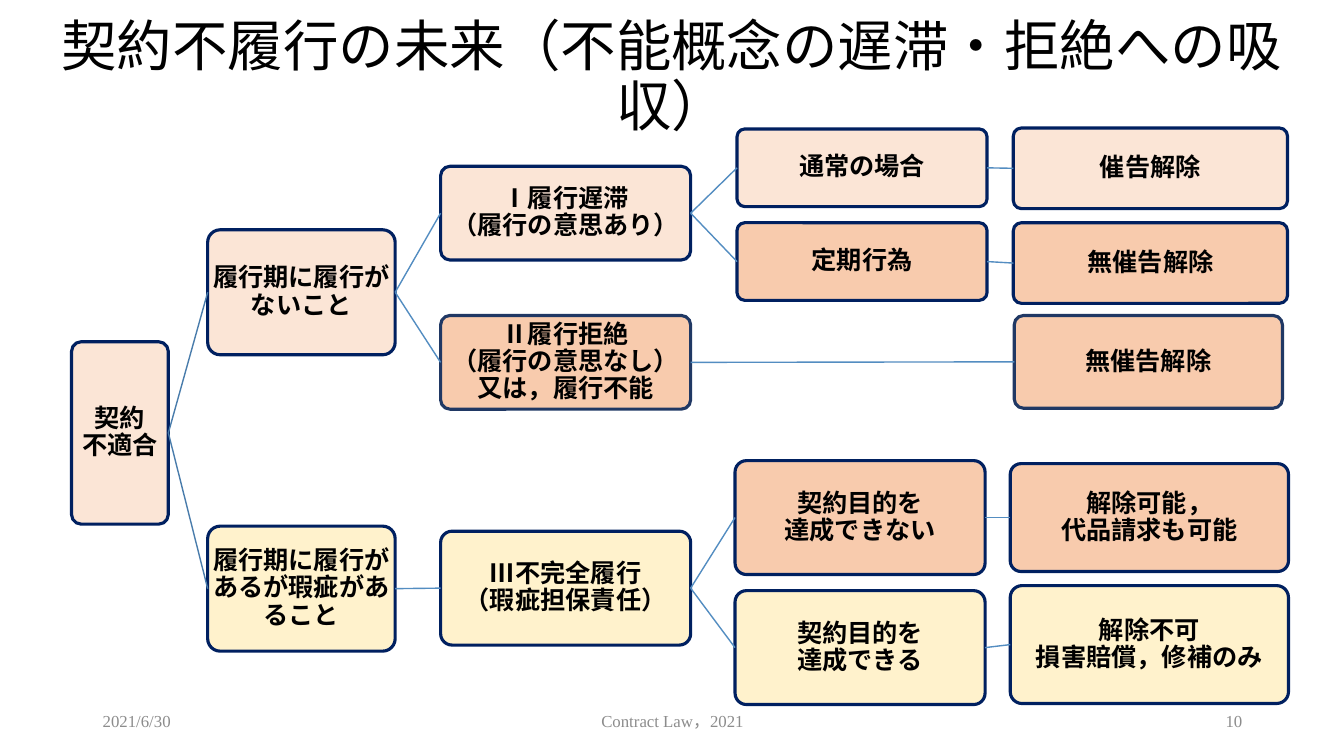
"""Build a slide with a decision tree on the future of contract non-performance."""
from pptx import Presentation
from pptx.dml.color import RGBColor
from pptx.enum import shapes, text
from pptx.oxml.ns import qn
from pptx.util import Inches, Pt

CJK_FONT, LATIN_FONT = "Noto Sans CJK JP", "Times New Roman"
PINK, ORANGE, YELLOW = "FBE5D6", "F8CBAD", "FFF2CC"
NAVY, SLATE = "002060", "203864"
ROOT_LINK, LINK = "497CAB", "538DC1"
BLACK, GREY = "000000", "8C8C8C"

TITLE = "契約不履行の未来（不能概念の遅滞・拒絶への吸収）"

# key: (parent, wording, left, top, width, height, fill, outline)
NODES = {
    "breach": (None, "契約\n不適合", 0.71, 3.39, 0.96, 1.81, PINK, NAVY),
    "none": ("breach", "履行期に履行がないこと", 2.06, 2.28, 1.86, 1.24, PINK, NAVY),
    "delay": ("none", "Ⅰ履行遅滞\n（履行の意思あり）", 4.37, 1.65, 2.48, 0.93, PINK, NAVY),
    "usual": ("delay", "通常の場合", 7.31, 1.28, 2.48, 0.77, PINK, NAVY),
    "notice": ("usual", "催告解除", 10.05, 1.27, 2.72, 0.8, PINK, NAVY),
    "fixed": ("delay", "定期行為", 7.31, 2.21, 2.48, 0.77, ORANGE, NAVY),
    "instant": ("fixed", "無催告解除", 10.05, 2.21, 2.72, 0.8, ORANGE, NAVY),
    "refusal": ("none", "Ⅱ履行拒絶\n（履行の意思なし）\n又は，履行不能",
                4.37, 3.13, 2.48, 0.93, ORANGE, SLATE),
    "at_once": ("refusal", "無催告解除", 10.06, 3.13, 2.66, 0.92, ORANGE, SLATE),
    "defect": ("breach", "履行期に履行があるが瑕疵があること",
               2.06, 5.22, 1.86, 1.24, YELLOW, NAVY),
    "partial": ("defect", "Ⅲ不完全履行\n（瑕疵担保責任）", 4.37, 5.27, 2.48, 1.13, YELLOW, NAVY),
    "failed": ("partial", "契約目的を\n達成できない", 7.29, 4.57, 2.48, 1.13, ORANGE, NAVY),
    "replace": ("failed", "解除可能，\n代品請求も可能", 10.02, 4.6, 2.76, 1.07, ORANGE, NAVY),
    "achieved": ("partial", "契約目的を\n達成できる", 7.29, 5.86, 2.48, 1.13, YELLOW, NAVY),
    "repair": ("achieved", "解除不可\n損害賠償，修補のみ", 10.02, 5.81, 2.76, 1.17, YELLOW, NAVY),
}

FOOTERS = [
    ("2021/6/30", 0.92, 3, text.PP_ALIGN.LEFT),
    ("Contract Law，2021", 4.42, 4.5, text.PP_ALIGN.CENTER),
    ("10", 9.42, 3, text.PP_ALIGN.RIGHT),
]


def colour(value):
    return RGBColor.from_string(value)


def write(shape, wording, size, ink, align, font=LATIN_FONT, bold=False, spacing=None):
    frame = shape.text_frame
    frame.word_wrap = True
    frame.auto_size = text.MSO_AUTO_SIZE.NONE
    frame.vertical_anchor = text.MSO_ANCHOR.MIDDLE
    para = frame.paragraphs[0]
    para.text = wording
    para.alignment = align
    para.line_spacing = spacing
    for span in para.runs:
        span.font.size = Pt(size)
        span.font.bold = bold
        span.font.name = font
        span.font.color.rgb = colour(ink)
        east_asian = span.font._element.makeelement(qn("a:ea"), {"typeface": CJK_FONT})
        span.font._element.append(east_asian)


def add_node(page, wording, left, top, width, height, fill, outline):
    box = page.shapes.add_shape(
        shapes.MSO_SHAPE.ROUNDED_RECTANGLE,
        Inches(left), Inches(top), Inches(width), Inches(height))
    box.adjustments[0] = 0.1
    box.shadow.inherit = False
    box.fill.solid()
    box.fill.fore_color.rgb = colour(fill)
    box.line.color.rgb = colour(outline)
    box.line.width = Pt(2.25)
    frame = box.text_frame
    frame.margin_left = frame.margin_right = Inches(0.01)
    frame.margin_top = frame.margin_bottom = Inches(0.01)
    write(box, wording, 18, BLACK, text.PP_ALIGN.CENTER, bold=True, spacing=0.9)
    return box


def add_link(page, parent, child, ink):
    link = page.shapes.add_connector(shapes.MSO_CONNECTOR.STRAIGHT, 0, 0, 0, 0)
    link.begin_connect(parent, 3)
    link.end_connect(child, 1)
    link.line.color.rgb = colour(ink)
    link.line.width = Pt(1)
    properties = link._element.spPr
    properties.append(properties.makeelement(qn("a:effectLst"), {}))


def main():
    deck = Presentation()
    deck.slide_width, deck.slide_height = Inches(13.33), Inches(7.5)
    page = deck.slides.add_slide(deck.slide_layouts[5])

    title = page.shapes.title
    title.left, title.top = Inches(0.24), Inches(0.4)
    title.width, title.height = Inches(12.84), Inches(0.75)
    write(title, TITLE, 39.6, BLACK, text.PP_ALIGN.CENTER, font=CJK_FONT, spacing=0.9)

    boxes = {}
    for key, (parent, *details) in NODES.items():
        boxes[key] = add_node(page, *details)
        if parent:
            ink = ROOT_LINK if parent == "breach" else LINK
            add_link(page, boxes[parent], boxes[key], ink)

    for wording, left, width, align in FOOTERS:
        footer = page.shapes.add_textbox(Inches(left), Inches(6.95), Inches(width), Inches(0.4))
        write(footer, wording, 12, GREY, align)

    deck.save("out.pptx")


if __name__ == "__main__":
    main()
